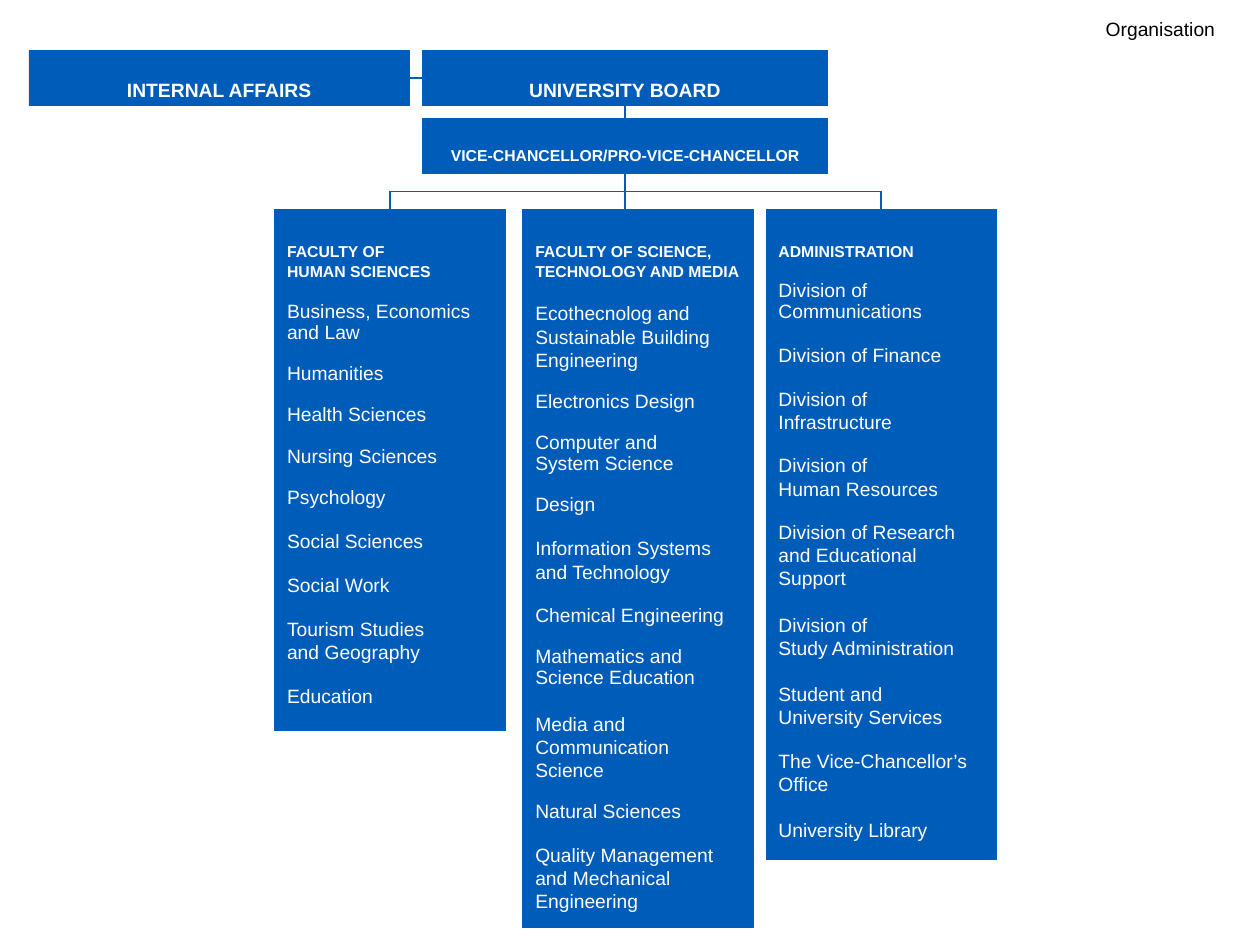
from lxml.etree import SubElement
from pptx import Presentation
from pptx.dml.color import RGBColor
from pptx.enum.shapes import MSO_CONNECTOR, MSO_SHAPE
from pptx.enum.text import MSO_ANCHOR, MSO_AUTO_SIZE, PP_ALIGN
from pptx.oxml.ns import qn
from pptx.util import Inches, Pt

UNIT = Inches(0.1)  # the slide is a grid of 100 columns and 75 rows
BLUE, WHITE, BLACK = "005CB9", "FFFFFF", "000000"
TIGHT, SINGLE, HEADING = 0.9, 1.0, 1.1  # line spacing
GAP, WIDE_GAP = 11.8, 13.2  # points between entries
TOP, BOTTOM, LEFT, RIGHT = 0, 2, 1, 3  # connection sites

# Entries are (text, line spacing, gap before)
HUMAN = [
    ("Business, Economics\vand Law", TIGHT, GAP),
    ("Humanities", TIGHT, GAP),
    ("Health Sciences", TIGHT, GAP),
    ("Nursing Sciences", TIGHT, GAP),
    ("Psychology", TIGHT, GAP),
    ("Social Sciences", SINGLE, GAP),
    ("Social Work", SINGLE, GAP),
    ("Tourism Studies\vand Geography", SINGLE, GAP),
    ("Education", SINGLE, GAP),
]
SCIENCE = [
    ("Ecothecnolog and\vSustainable Building\vEngineering", SINGLE, GAP),
    ("Electronics Design", TIGHT, GAP),
    ("Computer and\vSystem Science", TIGHT, GAP),
    ("Design", TIGHT, GAP),
    ("Information Systems\vand Technology", SINGLE, GAP),
    ("Chemical Engineering", SINGLE, GAP),
    ("Mathematics and Science Education", TIGHT, GAP),
    ("Media and\vCommunication\vScience", SINGLE, WIDE_GAP),
    ("Natural Sciences", TIGHT, GAP),
    ("Quality Management\vand Mechanical Engineering", SINGLE, GAP),
]
ADMINISTRATION = [
    ("Division of Communications", TIGHT, GAP),
    ("Division of Finance", SINGLE, GAP),
    ("Division of Infrastructure", SINGLE, GAP),
    ("Division of\vHuman Resources", SINGLE, GAP),
    ("Division of Research and Educational Support", SINGLE, GAP),
    ("Division of\vStudy Administration", SINGLE, WIDE_GAP),
    ("Student and\vUniversity Services", SINGLE, WIDE_GAP),
    ("The Vice-Chancellor’s\vOffice", SINGLE, GAP),
    ("University Library", SINGLE, WIDE_GAP),
]


def grid(*lengths):
    return [round(n * UNIT) for n in lengths]


def rgb(value):
    return RGBColor.from_string(value)


def style(p, size, color, bold=False, align=PP_ALIGN.LEFT, spacing=SINGLE, gap=0):
    p.alignment, p.line_spacing, p.space_before = align, spacing, Pt(gap)
    p.font.name, p.font.size, p.font.bold = "Arial", Pt(size), bold
    p.font.color.rgb = rgb(color)


def add_title(s, box):
    title = s.shapes.title
    title.left, title.top, title.width, title.height = grid(*box)
    tf = title.text_frame
    tf.text = "Organisation"
    tf.auto_size, tf.vertical_anchor = MSO_AUTO_SIZE.NONE, MSO_ANCHOR.TOP
    style(tf.paragraphs[0], 11, BLACK, align=PP_ALIGN.CENTER)


def add_box(s, box, inset):
    """Add a blue box whose text starts the given inset below its top."""
    sp = s.shapes.add_shape(MSO_SHAPE.RECTANGLE, *grid(*box))
    sp.shadow.inherit = False
    sp.fill.solid()
    sp.fill.fore_color.rgb = sp.line.color.rgb = rgb(BLUE)
    sp.line.width = Pt(0.5)
    tf = sp.text_frame
    tf.word_wrap, tf.vertical_anchor = True, MSO_ANCHOR.TOP
    tf.margin_top = Inches(inset)
    return sp


def add_unit(s, box, name, size):
    sp = add_box(s, box, 0.22)
    p = sp.text_frame.paragraphs[0]
    p.text = name
    style(p, size, WHITE, True, PP_ALIGN.CENTER)
    return sp


def add_column(s, box, heading, entries):
    sp = add_box(s, box, 0.24)
    tf = sp.text_frame
    tf.text = heading
    style(tf.paragraphs[0], 9, WHITE, True, spacing=HEADING)
    for text, spacing, gap in entries:
        p = tf.add_paragraph()
        p.text = text
        style(p, 11, WHITE, spacing=spacing, gap=gap)
    return sp


def add_line(s, start=(0, 0), end=(0, 0), begin=None, finish=None):
    """Draw a line between points, or from and to (shape, site) pairs."""
    line = s.shapes.add_connector(MSO_CONNECTOR.STRAIGHT, *start, *end)
    if begin:
        line.begin_connect(*begin)
    if finish:
        line.end_connect(*finish)
    line.line.color.rgb, line.line.width = rgb(BLUE), Pt(1)
    SubElement(line._element.spPr, qn("a:effectLst"))


def add_leadership(s, x, y):
    """Add the boxes above the columns and return the lowest one."""
    internal = add_unit(s, (x, y, 30.2, 4.4), "INTERNAL AFFAIRS", 11)
    board = add_unit(s, (x + 31.2, y, 32.2, 4.4), "UNIVERSITY BOARD", 11)
    chancellor = add_unit(s, (x + 31.2, y + 5.4, 32.2, 4.4),
                          "VICE-CHANCELLOR/PRO-VICE-CHANCELLOR", 9)
    add_line(s, begin=(internal, RIGHT), finish=(board, LEFT))
    add_line(s, begin=(board, BOTTOM), finish=(chancellor, TOP))
    return chancellor


def add_branches(s, parent, human, science, administration, row):
    """Join the parent to the columns through a bar at the given row."""
    bar = grid(row)[0]
    ends = [(sp.left + sp.width // 2, bar) for sp in (human, administration)]
    add_line(s, *ends)
    for end, sp in zip(ends, (human, administration)):
        add_line(s, start=end, finish=(sp, TOP))
    add_line(s, end=(parent.left + parent.width // 2, science.top),
             begin=(parent, BOTTOM))


def main():
    prs = Presentation()
    prs.slide_width, prs.slide_height = grid(100, 75)
    s = prs.slides.add_slide(prs.slide_layouts[5])
    add_title(s, (84.3, 0.9, 15.6, 2.9))
    chancellor = add_leadership(s, 2.3, 4)
    columns = [add_column(s, (x, 16.6, 18.3, height), heading, entries)
               for x, height, heading, entries in (
                   (21.8, 41.4, "FACULTY OF\vHUMAN SCIENCES", HUMAN),
                   (41.5, 57, "FACULTY OF SCIENCE, TECHNOLOGY AND MEDIA", SCIENCE),
                   (60.8, 51.6, "ADMINISTRATION", ADMINISTRATION))]
    add_branches(s, chancellor, *columns, row=15.2)
    prs.save("out.pptx")


if __name__ == "__main__":
    main()
